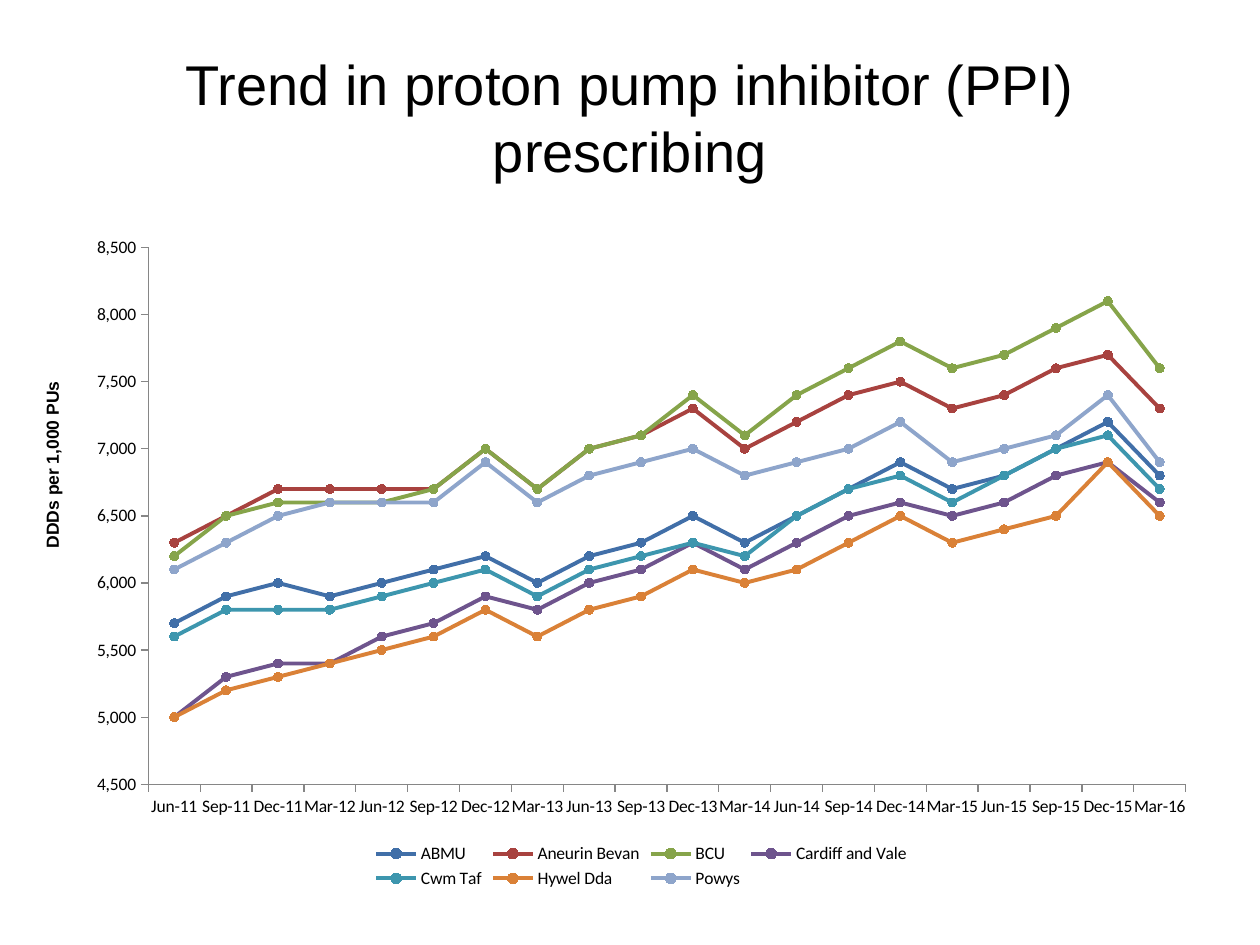
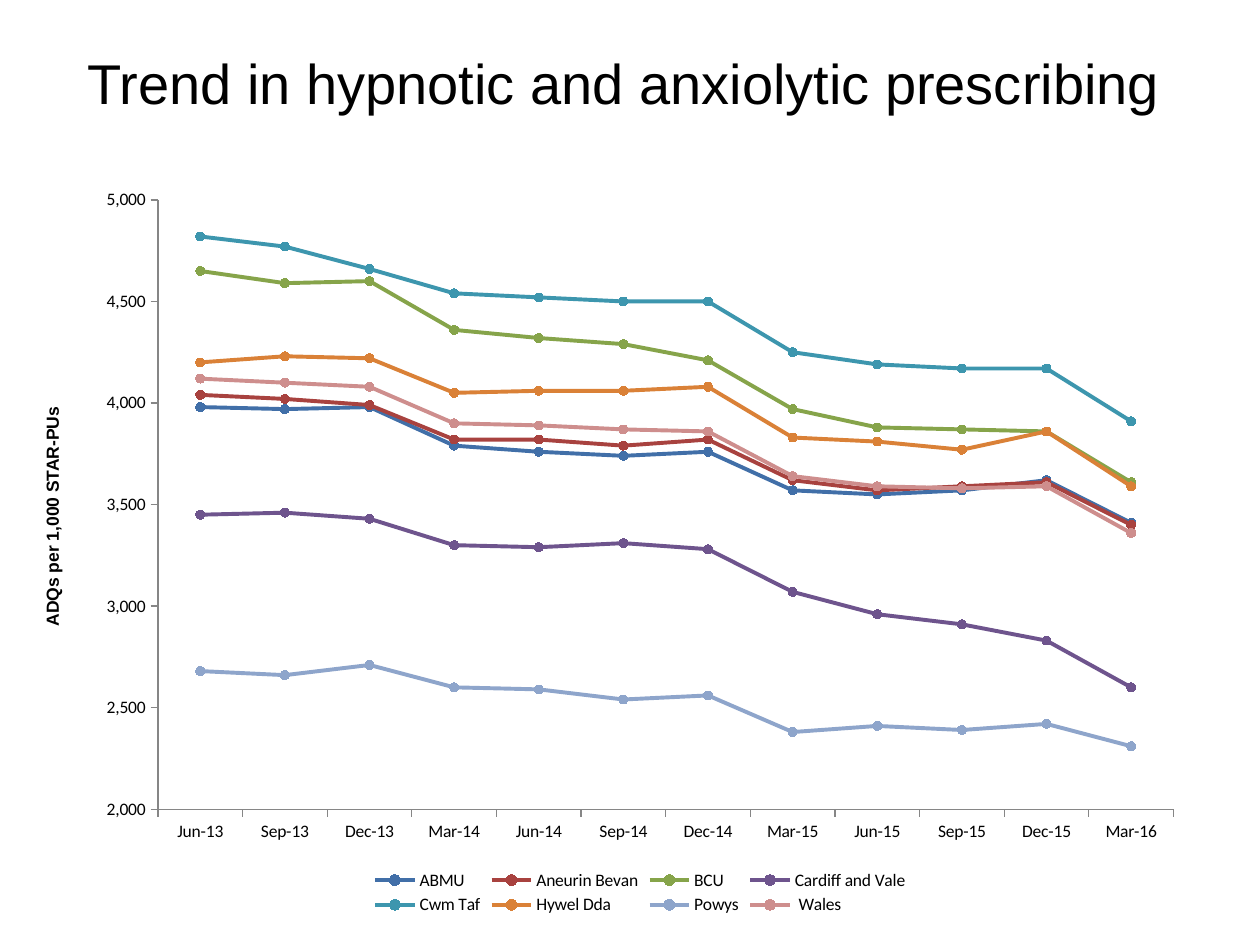
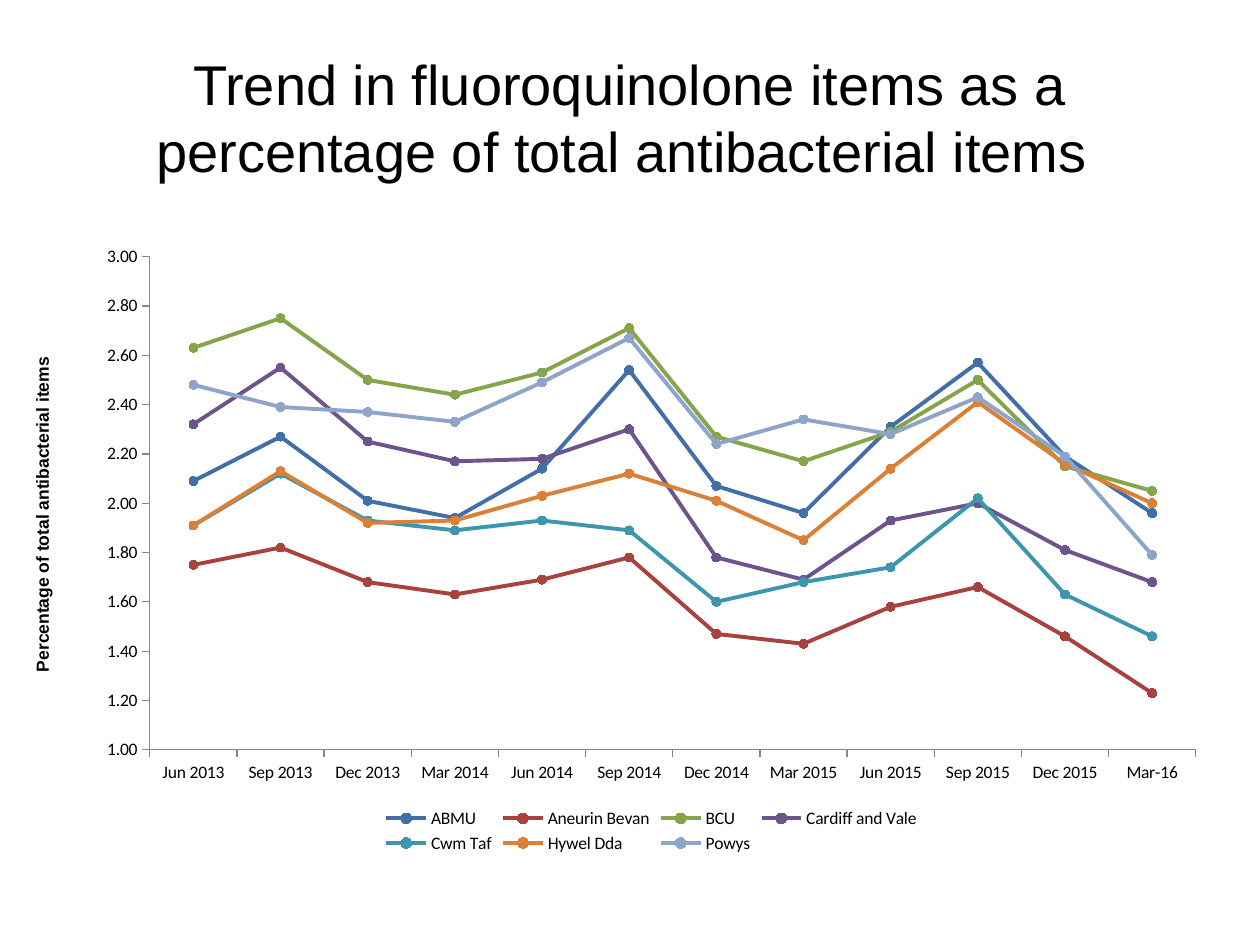
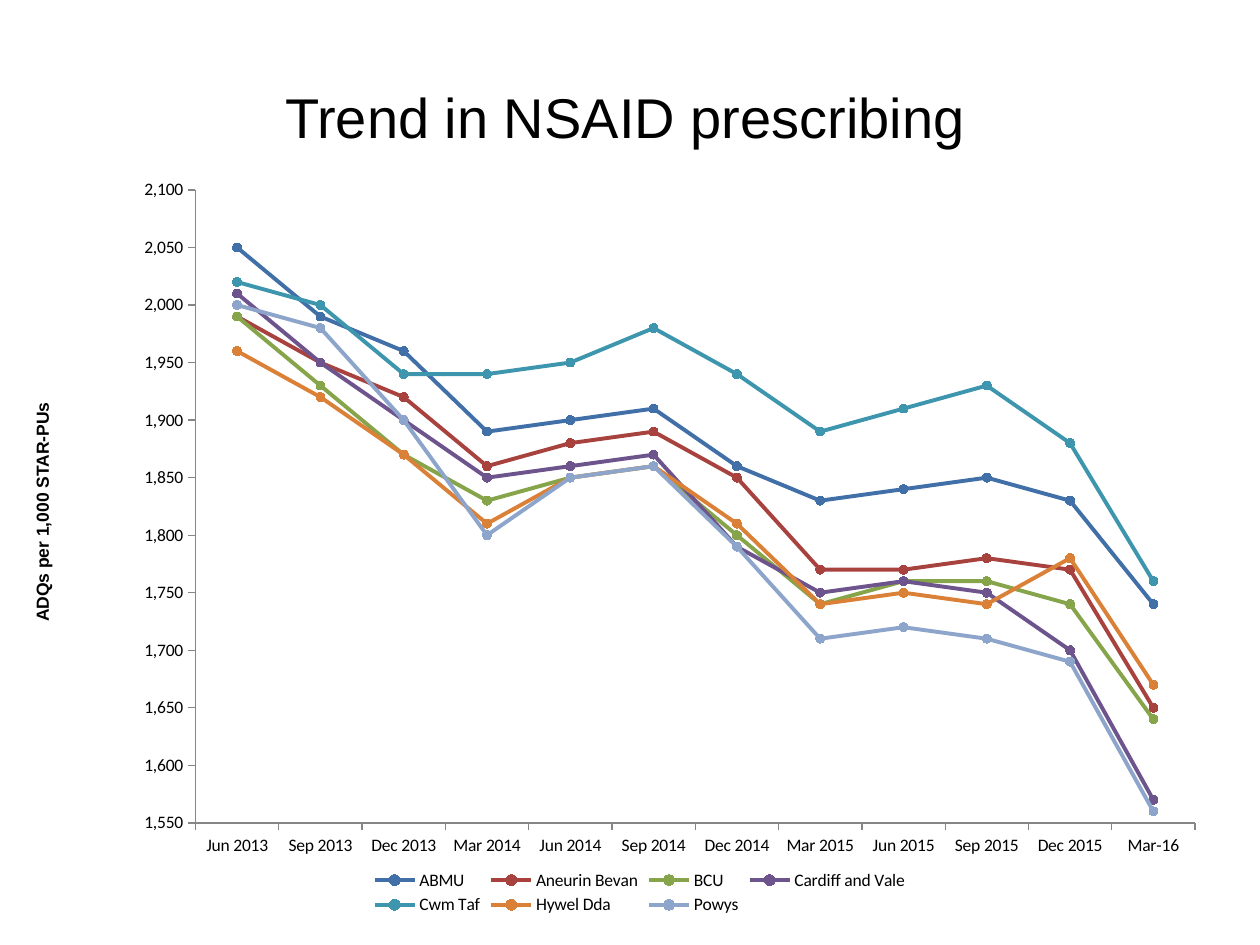
import dataclasses

import pptx
import pptx.chart.data
import pptx.dml.color
import pptx.enum.chart
import pptx.enum.text
import pptx.oxml
import pptx.oxml.ns
import pptx.util
from lxml import etree

PX = 9144
BOARDS = ["ABMU", "Aneurin Bevan", "BCU", "Cardiff and Vale", "Cwm Taf",
          "Hywel Dda", "Powys", " Wales"]
MONTHS = ["Mar", "Jun", "Sep", "Dec"]

PPI = [
    [5700, 5900, 6000, 5900, 6000, 6100, 6200, 6000, 6200, 6300,
     6500, 6300, 6500, 6700, 6900, 6700, 6800, 7000, 7200, 6800],
    [6300, 6500, 6700, 6700, 6700, 6700, 7000, 6700, 7000, 7100,
     7300, 7000, 7200, 7400, 7500, 7300, 7400, 7600, 7700, 7300],
    [6200, 6500, 6600, 6600, 6600, 6700, 7000, 6700, 7000, 7100,
     7400, 7100, 7400, 7600, 7800, 7600, 7700, 7900, 8100, 7600],
    [5000, 5300, 5400, 5400, 5600, 5700, 5900, 5800, 6000, 6100,
     6300, 6100, 6300, 6500, 6600, 6500, 6600, 6800, 6900, 6600],
    [5600, 5800, 5800, 5800, 5900, 6000, 6100, 5900, 6100, 6200,
     6300, 6200, 6500, 6700, 6800, 6600, 6800, 7000, 7100, 6700],
    [5000, 5200, 5300, 5400, 5500, 5600, 5800, 5600, 5800, 5900,
     6100, 6000, 6100, 6300, 6500, 6300, 6400, 6500, 6900, 6500],
    [6100, 6300, 6500, 6600, 6600, 6600, 6900, 6600, 6800, 6900,
     7000, 6800, 6900, 7000, 7200, 6900, 7000, 7100, 7400, 6900],
]
HYPNOTICS = [
    [3980, 3970, 3980, 3790, 3760, 3740, 3760, 3570, 3550, 3570, 3620, 3410],
    [4040, 4020, 3990, 3820, 3820, 3790, 3820, 3620, 3570, 3590, 3610, 3400],
    [4650, 4590, 4600, 4360, 4320, 4290, 4210, 3970, 3880, 3870, 3860, 3610],
    [3450, 3460, 3430, 3300, 3290, 3310, 3280, 3070, 2960, 2910, 2830, 2600],
    [4820, 4770, 4660, 4540, 4520, 4500, 4500, 4250, 4190, 4170, 4170, 3910],
    [4200, 4230, 4220, 4050, 4060, 4060, 4080, 3830, 3810, 3770, 3860, 3590],
    [2680, 2660, 2710, 2600, 2590, 2540, 2560, 2380, 2410, 2390, 2420, 2310],
    [4120, 4100, 4080, 3900, 3890, 3870, 3860, 3640, 3590, 3580, 3590, 3360],
]
FLUOROQUINOLONES = [
    [2.09, 2.27, 2.01, 1.94, 2.14, 2.54, 2.07, 1.96, 2.31, 2.57, 2.19, 1.96],
    [1.75, 1.82, 1.68, 1.63, 1.69, 1.78, 1.47, 1.43, 1.58, 1.66, 1.46, 1.23],
    [2.63, 2.75, 2.5, 2.44, 2.53, 2.71, 2.27, 2.17, 2.29, 2.5, 2.15, 2.05],
    [2.32, 2.55, 2.25, 2.17, 2.18, 2.3, 1.78, 1.69, 1.93, 2, 1.81, 1.68],
    [1.91, 2.12, 1.93, 1.89, 1.93, 1.89, 1.6, 1.68, 1.74, 2.02, 1.63, 1.46],
    [1.91, 2.13, 1.92, 1.93, 2.03, 2.12, 2.01, 1.85, 2.14, 2.41, 2.16, 2],
    [2.48, 2.39, 2.37, 2.33, 2.49, 2.67, 2.24, 2.34, 2.28, 2.43, 2.19, 1.79],
]
NSAIDS = [
    [2050, 1990, 1960, 1890, 1900, 1910, 1860, 1830, 1840, 1850, 1830, 1740],
    [1990, 1950, 1920, 1860, 1880, 1890, 1850, 1770, 1770, 1780, 1770, 1650],
    [1990, 1930, 1870, 1830, 1850, 1860, 1800, 1740, 1760, 1760, 1740, 1640],
    [2010, 1950, 1900, 1850, 1860, 1870, 1790, 1750, 1760, 1750, 1700, 1570],
    [2020, 2000, 1940, 1940, 1950, 1980, 1940, 1890, 1910, 1930, 1880, 1760],
    [1960, 1920, 1870, 1810, 1850, 1860, 1810, 1740, 1750, 1740, 1780, 1670],
    [2000, 1980, 1900, 1800, 1850, 1860, 1790, 1710, 1720, 1710, 1690, 1560],
]


@dataclasses.dataclass(frozen=True)
class Theme:
    ink: str = "000000"
    paper: str = "FFFFFF"
    axis: str = "868686"
    lines: tuple = ("416FA8", "A8423F", "86A44A", "6E548D",
                    "3D96AE", "DA8137", "8EA5CB", "CE8E8D")
    text_font: str = "Arial"
    chart_font: str = "Calibri"
    title_size: int = 32
    space_size: int = 24
    label_size: int = 10
    line_width: float = 2.25
    axis_width: float = 0.75
    marker_size: int = 5


def rgb(value):
    return pptx.dml.color.RGBColor.from_string(value)


def quarters(year, count, pattern):
    """Label quarters from June of a two-digit year."""
    return [pattern.format(MONTHS[i % 4], year + i // 4) for i in range(1, count + 1)]


def add_text(p, text, font, size, color, bold=False, align=None):
    if align is not None:
        p.alignment = align
    r = p.add_run()
    r.text = text
    r.font.name = font
    r.font.size = pptx.util.Pt(size)
    r.font.bold = bold
    r.font.color.rgb = rgb(color)


class Deck:
    def __init__(self, theme):
        self.theme = theme
        self.prs = pptx.Presentation()
        self.prs.slide_width, self.prs.slide_height = 1000 * PX, 750 * PX
        self.s = None

    def slide(self):
        self.s = self.prs.slides.add_slide(self.prs.slide_layouts[5])
        self.s.background.fill.solid()
        self.s.background.fill.fore_color.rgb = rgb(self.theme.paper)

    def title(self, text, top=30, height=125, space_font=None):
        t = self.theme
        sp = self.s.shapes.title
        sp.left, sp.top, sp.width, sp.height = [v * PX for v in (50, top, 900, height)]
        tf = sp.text_frame
        tf.vertical_anchor = pptx.enum.text.MSO_ANCHOR.MIDDLE
        p = tf.paragraphs[0]
        add_text(p, text, t.text_font, t.title_size, t.ink,
                 align=pptx.enum.text.PP_ALIGN.CENTER)
        if space_font:
            add_text(p, " ", space_font, t.space_size, t.ink, bold=True)

    def axis_label(self, text, left, top, height, align=pptx.enum.text.PP_ALIGN.CENTER):
        t = self.theme
        sp = self.s.shapes.add_textbox(left * PX, top * PX, 37 * PX, height * PX)
        tf = sp.text_frame
        tf.word_wrap = True
        tf.auto_size = pptx.enum.text.MSO_AUTO_SIZE.SHAPE_TO_FIT_TEXT
        sp.element.txBody.find(pptx.oxml.ns.qn("a:bodyPr")).set("vert", "vert270")
        add_text(tf.paragraphs[0], text, t.text_font, t.label_size, t.ink,
                 bold=True, align=align)

    def line_chart(self, box, cats, rows, minimum, fmt="#,##0", major=None, plot=None):
        t = self.theme
        data = pptx.chart.data.CategoryChartData(number_format=fmt)
        data.categories = cats
        for name, values in zip(BOARDS, rows):
            data.add_series(name, values)
        chart = self.s.shapes.add_chart(
            pptx.enum.chart.XL_CHART_TYPE.LINE_MARKERS, *[v * PX for v in box], data).chart
        chart.has_title = False
        chart.font.name = t.chart_font
        chart.font.size = pptx.util.Pt(t.label_size)
        chart.font.color.rgb = rgb(t.ink)
        chart.has_legend = True
        chart.legend.position = pptx.enum.chart.XL_LEGEND_POSITION.BOTTOM
        chart.legend.include_in_layout = False
        chart.plots[0].vary_by_categories = False
        for axis in (chart.category_axis, chart.value_axis):
            axis.has_major_gridlines = False
            axis.major_tick_mark = pptx.enum.chart.XL_TICK_MARK.OUTSIDE
            axis.minor_tick_mark = pptx.enum.chart.XL_TICK_MARK.NONE
            axis.format.line.color.rgb = rgb(t.axis)
            axis.format.line.width = pptx.util.Pt(t.axis_width)
        axis = chart.value_axis
        axis.minimum_scale = minimum
        axis.tick_labels.number_format = fmt
        axis.tick_labels.number_format_is_linked = False
        if major:
            axis.major_unit = major
        for series, color in zip(chart.plots[0].series, t.lines):
            series.smooth = False
            series.format.line.color.rgb = rgb(color)
            series.format.line.width = pptx.util.Pt(t.line_width)
            marker = series.marker
            marker.style = pptx.enum.chart.XL_MARKER_STYLE.CIRCLE
            marker.size = t.marker_size
            marker.format.fill.solid()
            marker.format.fill.fore_color.rgb = rgb(color)
            marker.format.line.color.rgb = rgb(color)
        if plot:
            self.place_plot(chart, plot)

    def place_plot(self, chart, plot):
        """Fix the inner plot area as fractions of the chart."""
        qn = pptx.oxml.ns.qn
        area = chart.element.find(".//" + qn("c:plotArea"))
        for old in area.findall(qn("c:layout")):
            area.remove(old)
        layout = pptx.oxml.parse_xml("<c:layout %s/>" % pptx.oxml.ns.nsdecls("c"))
        area.insert(0, layout)
        manual = etree.SubElement(layout, qn("c:manualLayout"))
        entries = [("layoutTarget", "inner"), ("xMode", "edge"), ("yMode", "edge")]
        for tag, value in entries + list(zip("xywh", plot)):
            etree.SubElement(manual, qn("c:" + tag)).set("val", str(value))


def main():
    theme = Theme()
    deck = Deck(theme)
    short = quarters(13, 12, "{}-{}")
    full = quarters(13, 11, "{} 20{}") + short[-1:]
    tall_box = (67, 139, 882, 591)

    deck.slide()
    deck.title("Trend in proton pump inhibitor (PPI) prescribing")
    deck.axis_label("DDDs per 1,000 PUs", 28, 288, 157, align=None)
    deck.line_chart((59, 178, 900, 531), quarters(11, 20, "{}-{}"), PPI, 4500)

    deck.slide()
    deck.title("Trend in hypnotic and anxiolytic prescribing", 0, 131, theme.text_font)
    deck.axis_label("ADQs per 1,000 STAR-PUs", 28, 178, 464)
    deck.line_chart(tall_box, short, HYPNOTICS, 2000)

    deck.slide()
    deck.title("Trend in fluoroquinolone items as a percentage of total antibacterial items ")
    deck.line_chart((67, 186, 900, 495), full, FLUOROQUINOLONES, 1, "#,##0.00")
    deck.axis_label("Percentage of total antibacterial items ", 20, 178, 457)

    deck.slide()
    deck.title("Trend in NSAID prescribing", space_font=theme.chart_font)
    deck.axis_label("ADQs per 1,000 STAR-PUs", 20, 178, 457)
    deck.line_chart(tall_box, full, NSAIDS, 1550, major=50, plot=(0.1, 0.02, 0.9, 0.85))

    deck.prs.save("out.pptx")


if __name__ == "__main__":
    main()
